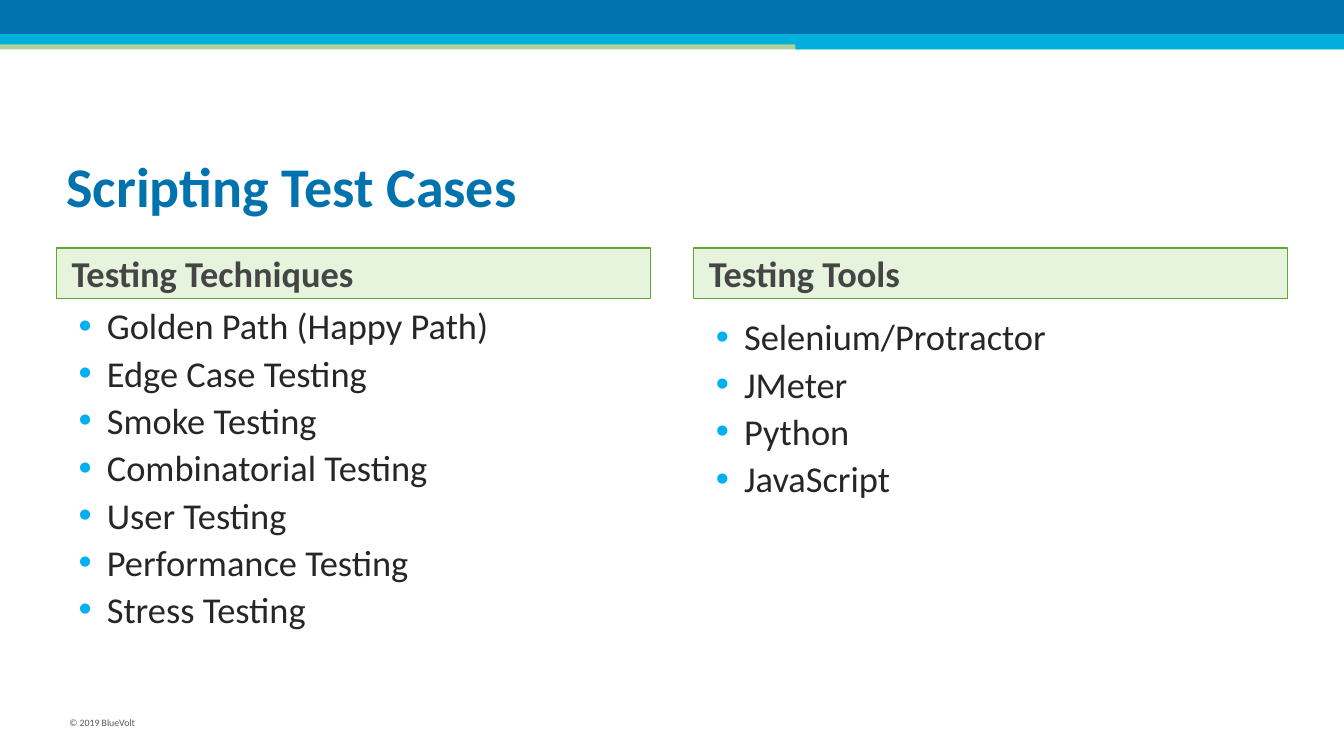
"""Build the "Scripting Test Cases" slide with two headed bullet lists."""
from pptx import Presentation
from pptx.dml.color import RGBColor
from pptx.enum.shapes import MSO_SHAPE
from pptx.enum.text import MSO_ANCHOR, MSO_AUTO_SIZE, PP_ALIGN
from pptx.oxml.ns import qn
from pptx.util import Inches, Pt
from lxml import etree

RECT = MSO_SHAPE.RECTANGLE
TOP, MIDDLE = MSO_ANCHOR.TOP, MSO_ANCHOR.MIDDLE
NO_FIT = MSO_AUTO_SIZE.NONE
LEFT = PP_ALIGN.LEFT

BLUE, CYAN, GREEN, PALE_GREEN = "0073AE", "00AFDB", "63A537", "9FD47D"
COLUMNS = [
    (0.56, 2.96, "Testing Techniques",
     ["Golden Path (Happy Path)", "Edge Case Testing", "Smoke Testing",
      "Combinatorial Testing", "User Testing", "Performance Testing",
      "Stress Testing"]),
    (6.88, 3.07, "Testing Tools",
     ["Selenium/Protractor", "JMeter", "Python", "JavaScript"]),
]
BANDS = [
    (0, 0.4, 13.33, 0.09, GREEN, 50),
    (0, 0, 13.33, 0.34, BLUE, 100),
    (0, 0.34, 13.33, 0.1, CYAN, 100),
    (7.89, 0.39, 5.44, 0.1, CYAN, 100),
]


def paint(fill, color, opacity=100):
    fill.solid()
    fill.fore_color.rgb = RGBColor.from_string(color)
    if opacity < 100:
        for clr in fill._xPr.iter(qn("a:srgbClr")):
            etree.SubElement(clr, qn("a:alpha")).set("val", str(opacity * 1000))


def set_text(sp, box, lines, size, color, bold=False, anchor=TOP, indent=(0, 0), bullet=False):
    sp.left, sp.top, sp.width, sp.height = [Inches(v) for v in box]
    tf = sp.text_frame
    tf.text = "\n".join(lines)
    tf.word_wrap = True
    tf.auto_size = NO_FIT
    tf.vertical_anchor = anchor
    for i, p in enumerate(tf.paragraphs):
        pPr = p._p.get_or_add_pPr()
        pPr.set("marL", str(Inches(indent[0])))
        pPr.set("indent", str(Inches(indent[1])))
        if bullet:
            clr = etree.SubElement(pPr, qn("a:buClr"))
            etree.SubElement(clr, qn("a:srgbClr")).set("val", "00B0F0")
            etree.SubElement(pPr, qn("a:buSzPct")).set("val", "103000")
            etree.SubElement(pPr, qn("a:buFont")).set("typeface", "Arial")
            etree.SubElement(pPr, qn("a:buChar")).set("char", "•")
        else:
            etree.SubElement(pPr, qn("a:buNone"))
        p.alignment = LEFT
        p.space_before = Pt(2.6 if i else 0)
        for r in p.runs:
            r.font.name = "Calibri"
            r.font.size = Pt(size)
            r.font.bold = bold
            r.font.color.rgb = RGBColor.from_string(color)


prs = Presentation()
prs.slide_width, prs.slide_height = Inches(13.33), Inches(7.5)
s = prs.slides.add_slide(prs.slide_layouts[4])

for x, y, w, h, color, opacity in BANDS:
    sp = s.shapes.add_shape(RECT, Inches(x), Inches(y), Inches(w), Inches(h))
    sp.shadow.inherit = False
    paint(sp.fill, color, opacity)
    sp.line.fill.background()

footer = s.shapes.add_textbox(0, 0, 0, 0)
set_text(footer, (0.59, 7.06, 2.81, 0.22), ["© 2019 BlueVolt"], 7, "595959")

set_text(s.shapes.title, (0.56, 1.25, 12.22, 1.17), ["Scripting Test Cases"],
         40, BLUE, bold=True, anchor=MIDDLE)

for i, (x, list_top, heading, items) in enumerate(COLUMNS):
    header = s.placeholders[1 + 2 * i]
    set_text(header, (x, 2.46, 5.89, 0.5), [heading], 26, "454545",
             bold=True, anchor=MIDDLE, indent=(0.05, 0))
    paint(header.fill, PALE_GREEN, 25)
    paint(header.line.fill, GREEN)
    header.line.width = Pt(1)
    set_text(s.placeholders[2 + 2 * i], (x, list_top, 5.89, 4.25), items,
             26, "262626", indent=(0.4, -0.28), bullet=True)

prs.save("out.pptx")
